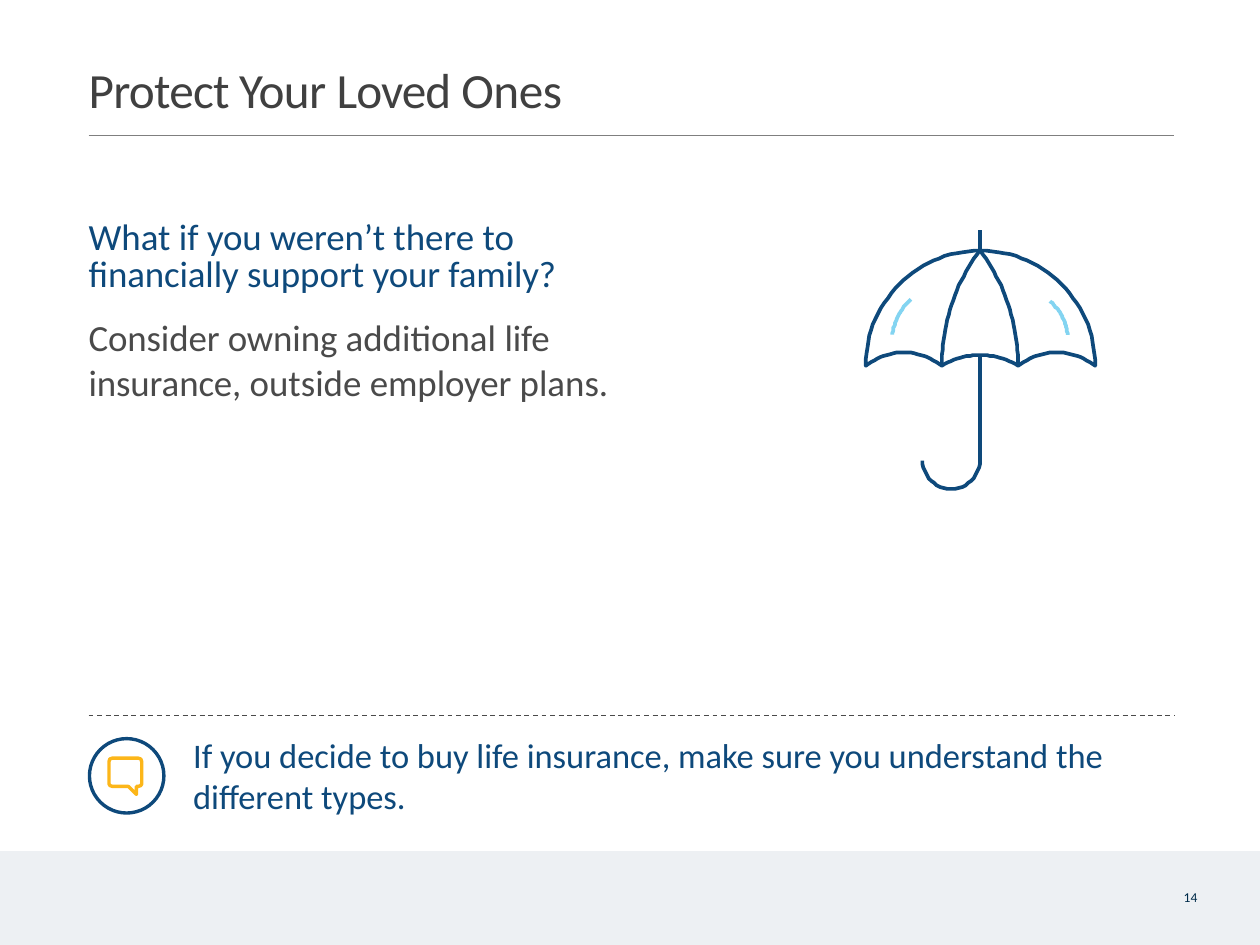
from dataclasses import dataclass
from math import atan, cos, hypot, sin

from lxml.etree import SubElement
from pptx import Presentation
from pptx.dml.color import RGBColor
from pptx.enum.dml import MSO_LINE
from pptx.enum.shapes import MSO_CONNECTOR, MSO_SHAPE
from pptx.enum.text import MSO_ANCHOR, MSO_AUTO_SIZE, PP_ALIGN
from pptx.oxml.ns import qn
from pptx.util import Pt

# Content: each paragraph is a list of (text, tracking in 1/100 pt)
TITLE = [("Protect Your ", -60), ("Loved ", -80), ("Ones", -30)]
QUESTION = [("What if ", 0), ("you weren’t ", -10), ("there to ", 0),
            ("financially ", -10), ("support ", 0), ("your family?", -10)]
ADVICE = [("Consider owning ", -10), ("additional ", 0), ("life insurance, ", -10),
          ("outside ", 0), ("employer ", -10), ("plans.", 0)]
REMINDER = [("If you decide to buy life insurance, make sure you "
             "understand the different types.", 0)]
PAGE_NUMBER = [("14", 0)]


@dataclass(frozen=True)
class Theme:
    font: str = "Calibri"
    heading: str = "404040"
    body: str = "4A4A4A"
    blue: str = "0E497B"
    sky: str = "83D4F1"
    amber: str = "FCB619"
    rule: str = "7F7F7F"
    band: str = "EDF0F3"
    number: str = "002B49"
    title_size: int = 40
    body_size: int = 30
    reminder_size: int = 28
    number_size: int = 11
    icon_line: float = 3
    badge_line: float = 2.75
    rule_line: float = 1


THEME = Theme()
PX = 9144  # 100 px to the inch
WIDTH, HEIGHT = 1422, 1067
LEFT, RIGHT = 100, 1325
BAND_TOP = 961


# Helpers
def color(value):
    return RGBColor.from_string(value)


def set_frame(shape, box, top=1, left=0, right=0):
    shape.left, shape.top, shape.width, shape.height = (n * PX for n in box)
    frame = shape.text_frame
    frame.word_wrap = True
    frame.auto_size = MSO_AUTO_SIZE.NONE
    frame.vertical_anchor = MSO_ANCHOR.TOP
    frame.margin_left, frame.margin_right = left * PX, right * PX
    frame.margin_top, frame.margin_bottom = top * PX, 0
    return frame


def write(paragraph, runs, size, fill, before=0, spacing=1.0):
    properties = paragraph._p.get_or_add_pPr()
    properties.set("marL", "0")
    properties.set("indent", "0")
    SubElement(properties, qn("a:buNone"))
    paragraph.alignment = PP_ALIGN.LEFT
    paragraph.space_before = Pt(before)
    paragraph.line_spacing = spacing
    for text, tracking in runs:
        run = paragraph.add_run()
        run.text = text
        run.font.name, run.font.size = THEME.font, Pt(size)
        run.font.color.rgb = color(fill)
        run._r.get_or_add_rPr().set("spc", str(tracking))


def outline(shape, stroke, width):
    shape.fill.background()
    shape.line.color.rgb = color(stroke)
    shape.line.width = Pt(width)
    shape.shadow.inherit = False


def add_line(shapes, start, end, stroke, width, dash=None):
    connector = shapes.add_connector(
        MSO_CONNECTOR.STRAIGHT, *(n * PX for n in start + end))
    connector.line.color.rgb = color(stroke)
    connector.line.width = Pt(width)
    if dash:
        connector.line.dash_style = dash
    SubElement(connector._element.spPr, qn("a:effectLst"))


def add_path(shapes, points, stroke, width, close=False):
    builder = shapes.build_freeform(*points[0], scale=PX)
    builder.add_line_segments(points[1:], close=close)
    outline(builder.convert_to_shape(), stroke, width)


def bow(start, end, rise, steps=24):
    """Points of a circular arc; a positive rise bends to the left of travel."""
    (x0, y0), (x1, y1) = start, end
    half = hypot(x1 - x0, y1 - y0) / 2
    ux, uy = (x1 - x0) / (2 * half), (y1 - y0) / (2 * half)
    radius = (half ** 2 + rise ** 2) / (2 * rise)
    sweep = 2 * atan(rise / half)
    points = []
    for step in range(steps + 1):
        angle = sweep * (2 * step / steps - 1)
        along = radius * sin(angle)
        offset = radius * (cos(angle) - 1) + rise
        points.append(((x0 + x1) / 2 + along * ux + offset * uy,
                       (y0 + y1) / 2 + along * uy - offset * ux))
    return points


def add_umbrella(shapes):
    apex, tips = (1106, 282), [(x, 413) for x in (1236, 1149, 1063, 977)]
    canopy = bow(tips[-1], tips[0], 130, 60)
    for start, end, rise in zip(tips, tips[1:], (-15, -12, -15)):
        canopy += bow(start, end, rise)[1:]
    handle = bow((1041, 520), (1106, 520), -32) + [(1106, 401)]
    ribs = [bow(apex, tips[2], -11), bow(apex, tips[1], 11)]
    glints = [bow((1007, 378), (1028, 338), 4), bow((1205, 378), (1185, 340), -4)]
    for glint in glints:
        add_path(shapes, glint, THEME.sky, THEME.icon_line)
    add_path(shapes, canopy, THEME.blue, THEME.icon_line, close=True)
    for stroke in ribs + [handle]:
        add_path(shapes, stroke, THEME.blue, THEME.icon_line)
    add_line(shapes, apex, (1106, 260), THEME.blue, THEME.icon_line)


def add_badge(shapes):
    circle = shapes.add_shape(MSO_SHAPE.OVAL, *(n * PX for n in (101, 834, 84, 84)))
    outline(circle, THEME.blue, THEME.badge_line)
    bubble = [(127, 856), (156, 856), (159, 857), (160, 860), (160, 885),
              (159, 887), (156, 888), (154, 888), (154, 897), (145, 888),
              (127, 888), (124, 887), (123, 885), (123, 860), (124, 857)]
    add_path(shapes, bubble, THEME.amber, THEME.badge_line, close=True)


def main():
    presentation = Presentation()
    presentation.slide_width, presentation.slide_height = WIDTH * PX, HEIGHT * PX
    slide = presentation.slides.add_slide(presentation.slide_layouts[1])
    shapes = slide.shapes

    # Footer band
    band = shapes.add_shape(MSO_SHAPE.RECTANGLE, 0, BAND_TOP * PX,
                            WIDTH * PX, (HEIGHT - BAND_TOP) * PX)
    band.fill.solid()
    band.fill.fore_color.rgb = color(THEME.band)
    band.line.fill.background()
    band.shadow.inherit = False

    # Title and body
    title = set_frame(shapes.title, (LEFT, 66, 869, 69))
    write(title.paragraphs[0], TITLE, THEME.title_size, THEME.heading)
    body = set_frame(slide.placeholders[1], (LEFT, 240, 659, 217), top=10, right=20)
    write(body.paragraphs[0], QUESTION, THEME.body_size, THEME.blue, spacing=Pt(30))
    write(body.add_paragraph(), ADVICE, THEME.body_size, THEME.body, before=16)

    # Rules
    add_line(shapes, (LEFT, 153), (RIGHT, 153), THEME.rule, THEME.rule_line)
    add_line(shapes, (LEFT, 808), (RIGHT, 808), THEME.body, THEME.rule_line,
             MSO_LINE.DASH)

    # Icons
    add_umbrella(shapes)
    add_badge(shapes)

    # Reminder and page number
    for runs, box, left, size, fill in (
            (REMINDER, (217, 828, 1104, 96), 1, THEME.reminder_size, THEME.blue),
            (PAGE_NUMBER, (1333, 1003, 23, 20), 3, THEME.number_size, THEME.number)):
        frame = set_frame(shapes.add_textbox(0, 0, PX, PX), box, left=left)
        write(frame.paragraphs[0], runs, size, fill)

    presentation.save("out.pptx")


if __name__ == "__main__":
    main()
